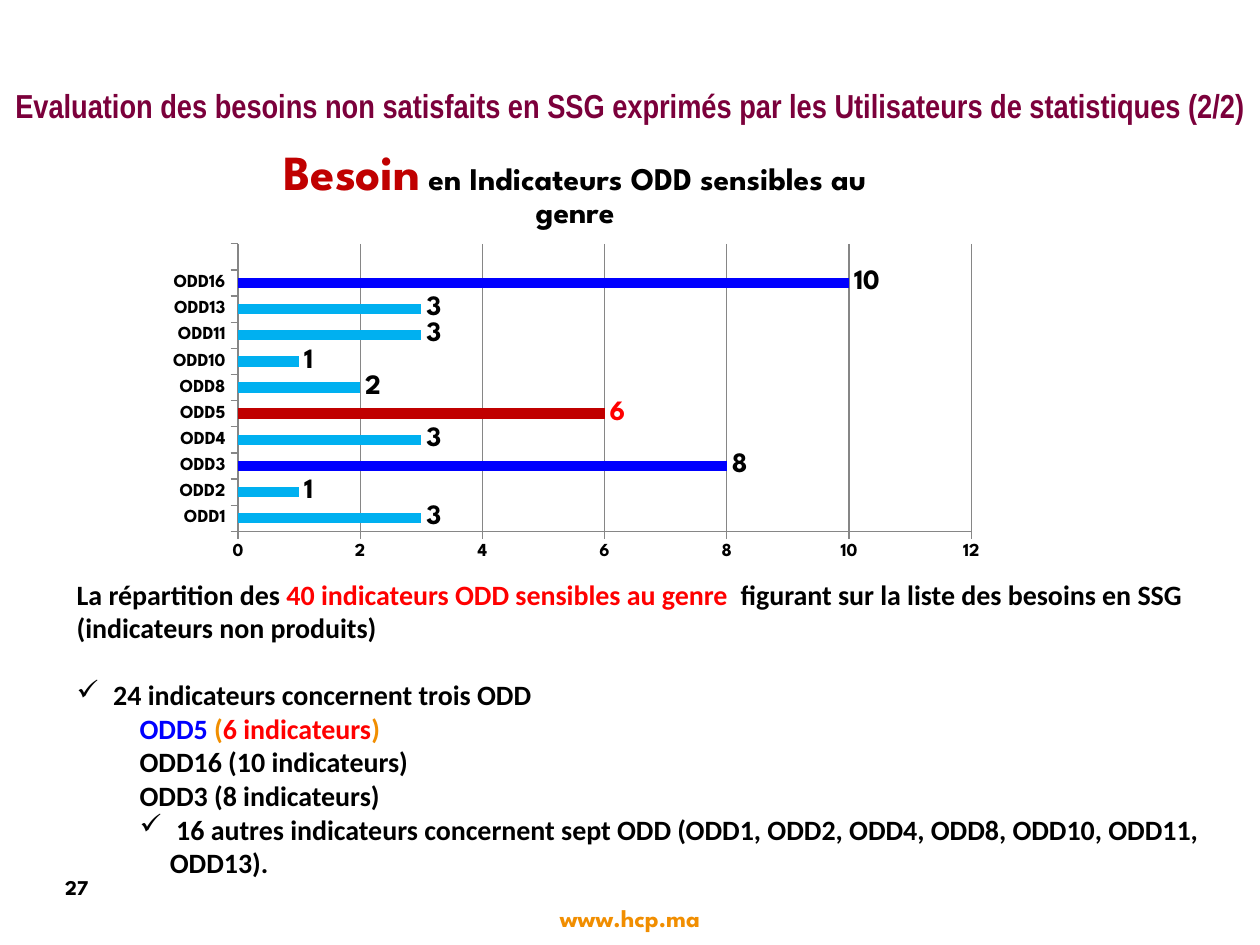
import pptx
import pptx.util
import pptx.chart.data
import pptx.dml.color
import pptx.enum.chart
import pptx.enum.shapes
import pptx.enum.text
import pptx.oxml
import pptx.oxml.ns

Inches, Pt = pptx.util.Inches, pptx.util.Pt
RGB = pptx.dml.color.RGBColor
ALIGN = pptx.enum.text.PP_ALIGN
MIDDLE = pptx.enum.text.MSO_ANCHOR.MIDDLE
BLACK = RGB(0x00, 0x00, 0x00)
RED = RGB(0xFF, 0x00, 0x00)
DARK_RED = RGB(0xC0, 0x00, 0x00)
BLUE = RGB(0x00, 0x00, 0xFF)
SKY = RGB(0x00, 0xB0, 0xF0)
PALE = RGB(0xBB, 0xE0, 0xE3)
ORANGE = RGB(0xF1, 0x8E, 0x00)
PLUM = RGB(0x7B, 0x00, 0x3B)
GRAY = RGB(0x86, 0x86, 0x86)
DISPLAY = "League Spartan"


def style(font, size, color, name=DISPLAY):
    for key, value in {"size": Pt(size), "name": name, "bold": True}.items():
        setattr(font, key, value)
    font.color.rgb = color


def add_run(p, text, *fmt):
    r = p.add_run()
    r.text = text
    style(r.font, *fmt)


prs = pptx.Presentation()
prs.slide_width, prs.slide_height = Inches(10), Inches(7.5)
s = prs.slides.add_slide(prs.slide_layouts[5])

sp = s.shapes.title
sp.left, sp.top, sp.width, sp.height = Inches(0), Inches(0.6), Inches(10), Inches(0.47)
tf = sp.text_frame
for key, value in {"margin_left": 0, "margin_right": 0, "word_wrap": True,
                   "vertical_anchor": MIDDLE,
                   "auto_size": pptx.enum.text.MSO_AUTO_SIZE.NONE}.items():
    setattr(tf, key, value)
p = tf.paragraphs[0]
p.alignment = ALIGN.CENTER
add_run(p, "Evaluation des besoins non satisfaits en SSG exprimés par les Utilisateurs "
           "de statistiques (2/2)", 19, PLUM, "Arial Narrow")

data = pptx.chart.data.CategoryChartData()
data.categories = ["ODD1", "ODD2", "ODD3", "ODD4", "ODD5", "ODD8",
                   "ODD10", "ODD11", "ODD13", "ODD16", ""]
values = [3, 1, 8, 3, 6, 2, 1, 3, 3, 10, None]
data.add_series("Series 1", values)
chart = s.shapes.add_chart(pptx.enum.chart.XL_CHART_TYPE.BAR_CLUSTERED, Inches(1.22),
                           Inches(1.07), Inches(6.69), Inches(3.46), data).chart
style(chart.font, 10, BLACK)
chart.has_legend = False
chart.has_title = True
p = chart.chart_title.text_frame.paragraphs[0]
add_run(p, "Besoin", 28, DARK_RED)
add_run(p, " en Indicateurs ODD sensibles au genre", 18, BLACK)

plot = chart.plots[0]
plot.gap_width = 150
plot.vary_by_categories = False
series = plot.series[0]
series.format.fill.solid()
series.format.fill.fore_color.rgb = PALE
highlights = {2: BLUE, 4: DARK_RED, 9: BLUE}
for i in range(10):
    fill = series.points[i].format.fill
    fill.solid()
    fill.fore_color.rgb = highlights.get(i, SKY)
outside = pptx.enum.chart.XL_LABEL_POSITION.OUTSIDE_END
labels = series.data_labels
labels.show_value = True
labels.position = outside
style(labels.font, 16, BLACK)
label = series.points[4].data_label
style(label.font, 16, RED)
label.position = outside

for axis in (chart.category_axis, chart.value_axis):
    style(axis.tick_labels.font, 10.5, BLACK)
    axis.format.line.color.rgb = GRAY
    axis.major_tick_mark = pptx.enum.chart.XL_TICK_MARK.OUTSIDE
axis = chart.value_axis
for key, value in {"minimum_scale": 0, "maximum_scale": 12, "major_unit": 2,
                   "has_major_gridlines": True}.items():
    setattr(axis, key, value)
axis.major_gridlines.format.line.color.rgb = GRAY

area = plot._element.getparent()
for old in area.findall(pptx.oxml.ns.qn("c:layout")):
    area.remove(old)
area.insert(0, pptx.oxml.parse_xml(
    f'<c:layout {pptx.oxml.ns.nsdecls("c")}><c:manualLayout>'
    '<c:layoutTarget val="inner"/><c:xMode val="edge"/><c:yMode val="edge"/>'
    '<c:x val="0.1"/><c:y val="0.25"/><c:w val="0.87"/><c:h val="0.66"/>'
    '</c:manualLayout></c:layout>'))

tf = s.shapes.add_textbox(Inches(0.51), Inches(4.52), Inches(9.21), Inches(2.52)).text_frame
tf.word_wrap = True
tf.vertical_anchor = MIDDLE
paragraphs = [
    (0, 0, 0, [("La répartition des ", BLACK),
               ("40 indicateurs ODD sensibles au genre  ", RED),
               ("figurant sur la liste des besoins en SSG (indicateurs non produits)", BLACK)]),
    (0.24, -0.24, 19, [(" 24 indicateurs concernent trois ODD", BLACK)]),
    (0.5, 0, 0, [("ODD5", BLUE), (" (", ORANGE), ("6 indicateurs", RED), (")", ORANGE)]),
    (0.5, 0, 0, [("ODD16 (10 indicateurs)", BLACK)]),
    (0.5, 0, 0, [("ODD3 (8 indicateurs)", BLACK)]),
    (0.74, -0.24, 0, [(" 16 autres indicateurs concernent sept ODD (ODD1, ODD2, ODD4, ODD8, "
                       "ODD10, ODD11, ODD13).", BLACK)]),
]
for i, (left, indent, before, runs) in enumerate(paragraphs):
    p = tf.add_paragraph() if i else tf.paragraphs[0]
    pPr = p._p.get_or_add_pPr()
    pPr.set("marL", str(Inches(left)))
    pPr.set("indent", str(Inches(indent)))
    if indent:
        pPr.append(pptx.oxml.parse_xml(
            f'<a:buChar {pptx.oxml.ns.nsdecls("a")} char="✓"/>'))
    if before:
        p.space_before = Pt(before)
    for text, color in runs:
        add_run(p, text, 16, color, "Calibri")

sp = s.shapes.add_shape(pptx.enum.shapes.MSO_SHAPE.OVAL, Inches(0.16), Inches(6.79),
                        Inches(0.75), Inches(0.5))
sp.shadow.inherit = False
sp.fill.background()
sp.line.fill.background()
sp.text_frame.vertical_anchor = MIDDLE
p = sp.text_frame.paragraphs[0]
p.alignment = ALIGN.RIGHT
add_run(p, "27", 12, BLACK)

tf = s.shapes.add_textbox(Inches(3.82), Inches(7.12), Inches(2.36), Inches(0.33)).text_frame
tf.word_wrap = True
p = tf.paragraphs[0]
p.alignment = ALIGN.CENTER
add_run(p, "www.hcp.ma", 14, ORANGE)

prs.save("out.pptx")
